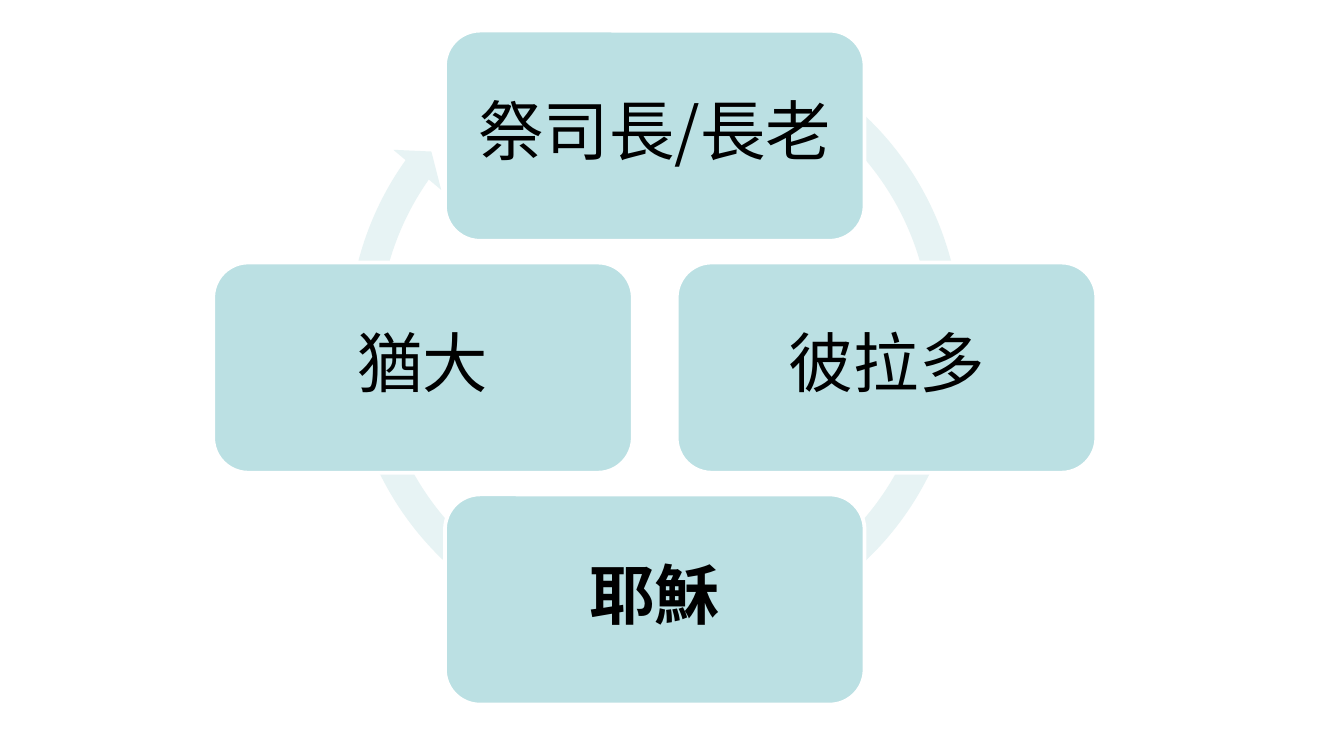
from pptx import Presentation
from pptx import util as u
from pptx.dml import color
from pptx.enum import shapes, text
from pptx.oxml import ns

COLORS = {"ring": "E7F3F4", "card": "BBE0E3", "edge": "FFFFFF", "text": "000000"}
FONT = "Noto Sans CJK TC"
RING_ADJUSTMENTS = (0.04668, 2.729, 129.217, 179.695, 0.04847)
CARDS = (
    ("祭司長/長老", 0, -1, False),
    ("彼拉多", 1, 0, False),
    ("耶穌", 0, 1, True),
    ("猶大", -1, 0, False),
)
FRAME_FORMAT = {
    "word_wrap": True,
    "vertical_anchor": text.MSO_ANCHOR.MIDDLE,
    "margin_left": u.Cm(0.38),
    "margin_right": u.Cm(0.38),
    "margin_top": u.Cm(0.38),
    "margin_bottom": u.Cm(0.38),
}
PARAGRAPH_FORMAT = {"alignment": text.PP_ALIGN.CENTER, "line_spacing": 0.85}


def set_format(target, values):
    """Set each named attribute on the target."""
    for name, value in values.items():
        setattr(target, name, value)


def rgb(name):
    """Return the palette colour of that name."""
    return color.RGBColor.from_string(COLORS[name])


def add_filled(slide, kind, box, fill):
    """Add a flat preset shape in a box of left, top, width and height."""
    shape = slide.shapes.add_shape(kind, *(u.Cm(length) for length in box))
    shape.shadow.inherit = False
    shape.fill.solid()
    shape.fill.fore_color.rgb = rgb(fill)
    return shape


def add_ring(slide, box):
    """Place the circular arrow that runs behind the cards."""
    ring = add_filled(slide, shapes.MSO_SHAPE.CIRCULAR_ARROW, box, "ring")
    ring.line.fill.background()
    for index, value in enumerate(RING_ADJUSTMENTS):
        ring.adjustments[index] = value


def add_card(slide, box, label, bold):
    """Place one rounded card with its centred label."""
    card = add_filled(slide, shapes.MSO_SHAPE.ROUNDED_RECTANGLE, box, "card")
    card.line.color.rgb = rgb("edge")
    card.line.width = u.Pt(2)
    set_format(card.text_frame, FRAME_FORMAT)
    paragraph = card.text_frame.paragraphs[0]
    set_format(paragraph, PARAGRAPH_FORMAT)
    run = paragraph.add_run()
    run.text = label
    set_format(run.font, {"name": FONT, "size": u.Pt(35), "bold": bold})
    run.font.color.rgb = rgb("text")
    east_asian = run.font._element.makeelement(ns.qn("a:ea"), {"typeface": FONT})
    run.font._element.append(east_asian)


def add_cycle(slide, box):
    """Place the ring and the four cards of the cycle in the given box."""
    left, top, width, height = box
    card_width, card_height, step, ring_size = 7.93, 3.97, 4.38, 12.19
    center_x, center_y = left + width / 2, top + height / 2
    add_ring(slide, (center_x - ring_size / 2, 0.3, ring_size, ring_size))
    for label, column, row, bold in CARDS:
        card_left = center_x + column * step - card_width / 2
        card_top = center_y + row * step - card_height / 2
        add_card(slide, (card_left, card_top, card_width, card_height), label, bold)


def main():
    """Build the one-slide presentation."""
    presentation = Presentation()
    set_format(
        presentation, {"slide_width": u.Cm(25.4), "slide_height": u.Cm(14.28)}
    )
    slide = presentation.slides.add_slide(presentation.slide_layouts[6])
    add_cycle(slide, (4.03, 0.58, 16.69, 12.73))
    presentation.save("out.pptx")


if __name__ == "__main__":
    main()
